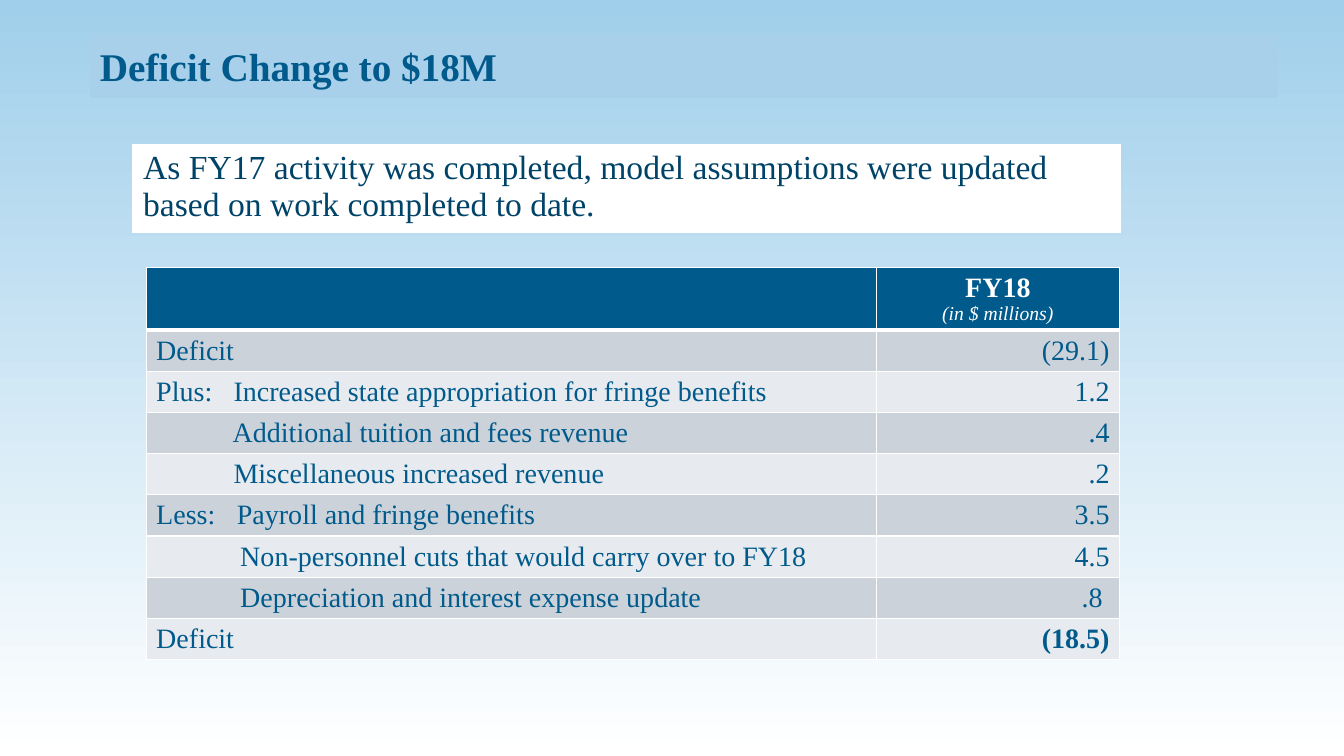
import dataclasses

import pptx
import pptx.dml.color
import pptx.enum.text
import pptx.oxml
import pptx.oxml.ns
import pptx.presentation
import pptx.slide
import pptx.table
import pptx.text.text
import pptx.util

SKY = pptx.dml.color.RGBColor(0xA0, 0xCF, 0xEB)
PALE = pptx.dml.color.RGBColor(0xA9, 0xD0, 0xEA)
BLUE = pptx.dml.color.RGBColor(0x00, 0x5A, 0x8B)
NAVY = pptx.dml.color.RGBColor(0x00, 0x43, 0x68)
WHITE = pptx.dml.color.RGBColor(0xFF, 0xFF, 0xFF)
BANDS = (
    pptx.dml.color.RGBColor(0xCC, 0xD2, 0xDA),
    pptx.dml.color.RGBColor(0xE7, 0xEA, 0xEE),
)
FONT = "Times New Roman"
ALIGN = pptx.enum.text.PP_ALIGN
WIDTH = pptx.util.Inches(13.33)
HEIGHT = pptx.util.Inches(7.5)
COLS, ROWS = 160, 90
THIN, THICK = 1, 3


@dataclasses.dataclass(frozen=True)
class Box:
    """A place on the slide, in grid columns and rows."""

    left: float
    top: float
    width: float
    height: float

    def place(self) -> tuple[int, int, int, int]:
        return across(self.left), down(self.top), across(self.width), down(self.height)


@dataclasses.dataclass(frozen=True)
class Entry:
    """A table line; stop is where its text starts after the label."""

    text: str
    value: str
    label: str = ""
    stop: float = 0
    bold: bool = False
    inset: float = 0


TITLE = Box(10.7, 3.96, 141.4, 7.7)
NOTE = Box(15.84, 17.16, 117.5, 10.3)
BUDGET = Box(17.4, 31.8, 115.9, 45.6)
SPLIT = (86.9, 29)
HEAD, LINE = 7.2, 4.8
ENTRIES = (
    Entry("Deficit", "(29.1)"),
    Entry("Increased state appropriation for fringe benefits", "1.2", "Plus:", 9.2),
    Entry("Additional tuition and fees revenue", ".4", stop=9.1),
    Entry("Miscellaneous increased revenue", ".2", stop=9.2),
    Entry("Payroll and fringe benefits", "3.5", "Less:", 9.6),
    Entry("Non-personnel cuts that would carry over to FY18", "4.5", stop=10),
    Entry("Depreciation and interest expense update", ".8", stop=10, inset=0.83),
    Entry("Deficit", "(18.5)", bold=True),
)


def across(cols: float) -> int:
    return round(WIDTH * cols / COLS)


def down(rows: float) -> int:
    return round(HEIGHT * rows / ROWS)


def write(
    para: pptx.text.text._Paragraph,
    text: str,
    *,
    size: float = 20,
    color: pptx.dml.color.RGBColor = BLUE,
    bold: bool = False,
    slant: bool = False,
    align: ALIGN = ALIGN.LEFT,
) -> None:
    para.alignment = align
    run = para.add_run()
    run.text = text
    run.font.name = FONT
    run.font.size = pptx.util.Pt(size)
    run.font.color.rgb = color
    run.font.bold = bold
    run.font.italic = slant


def indent(para: pptx.text.text._Paragraph, entry: Entry) -> None:
    """Start the text at the stop, by a tab after a label or by a margin."""
    props = para._p.get_or_add_pPr()
    stop = across(entry.stop)
    if entry.label:
        tabs = pptx.oxml.parse_xml(
            f'<a:tabLst {pptx.oxml.ns.nsdecls("a")}><a:tab pos="{stop}" algn="l"/></a:tabLst>'
        )
        props.append(tabs)
    else:
        props.set("marL", str(stop))


def paint(
    cell: pptx.table._Cell,
    fill: pptx.dml.color.RGBColor,
    top: float = THIN,
    base: float = THIN,
) -> None:
    """Fill the cell and give it white edges."""
    cell.fill.solid()
    cell.fill.fore_color.rgb = fill
    props = cell._tc.get_or_add_tcPr()
    edges = (("L", THIN), ("R", THIN), ("T", top), ("B", base))
    for spot, (side, width) in enumerate(edges):
        edge = pptx.oxml.parse_xml(
            f'<a:ln{side} {pptx.oxml.ns.nsdecls("a")} w="{pptx.util.Pt(width)}">'
            f'<a:solidFill><a:srgbClr val="{WHITE}"/></a:solidFill></a:ln{side}>'
        )
        props.insert(spot, edge)


def add_grid(slide: pptx.slide.Slide, rows: int, cols: int, box: Box) -> pptx.table.Table:
    table = slide.shapes.add_table(rows, cols, *box.place()).table
    table.first_row = table.horz_banding = False
    return table


def add_sky(slide: pptx.slide.Slide) -> None:
    fill = slide.background.fill
    fill.gradient()
    fill.gradient_angle = 270
    for stop, place, color in zip(fill.gradient_stops, (0, 1), (SKY, WHITE)):
        stop.position = place
        stop.color.rgb = color


def add_title(slide: pptx.slide.Slide) -> None:
    title = slide.shapes.title
    title.left, title.top, title.width, title.height = TITLE.place()
    title.fill.solid()
    title.fill.fore_color.rgb = PALE
    frame = title.text_frame
    frame.word_wrap = True
    frame.auto_size = pptx.enum.text.MSO_AUTO_SIZE.NONE
    frame.vertical_anchor = pptx.enum.text.MSO_ANCHOR.MIDDLE
    write(frame.paragraphs[0], "Deficit Change to $18M", size=28, bold=True)


def add_note(slide: pptx.slide.Slide) -> None:
    cell = add_grid(slide, 1, 1, NOTE).cell(0, 0)
    paint(cell, WHITE, base=THICK)
    text = (
        "As FY17 activity was completed, model assumptions were updated "
        "based on work completed to date."
    )
    write(cell.text_frame.paragraphs[0], text, size=24, color=NAVY)


def add_budget(slide: pptx.slide.Slide) -> None:
    table = add_grid(slide, len(ENTRIES) + 1, len(SPLIT), BUDGET)
    for col, width in zip(table.columns, SPLIT):
        col.width = across(width)
    for row in table.rows:
        row.height = down(LINE)
    table.rows[0].height = down(HEAD)

    for cell in table.rows[0].cells:
        paint(cell, BLUE, base=THICK)
    frame = table.cell(0, 1).text_frame
    write(frame.paragraphs[0], "FY18", color=WHITE, bold=True, align=ALIGN.CENTER)
    write(
        frame.add_paragraph(), "(in $ millions)",
        size=14, color=WHITE, slant=True, align=ALIGN.CENTER,
    )

    for num, entry in enumerate(ENTRIES):
        name, value = table.rows[num + 1].cells
        for cell in (name, value):
            paint(cell, BANDS[num % 2], top=THIN if num else THICK)
        para = name.text_frame.paragraphs[0]
        indent(para, entry)
        write(para, f"{entry.label}\t{entry.text}" if entry.label else entry.text)
        value.margin_right += across(entry.inset)
        write(
            value.text_frame.paragraphs[0], entry.value,
            bold=entry.bold, align=ALIGN.RIGHT,
        )


def main() -> None:
    deck = pptx.Presentation()
    deck.slide_width, deck.slide_height = WIDTH, HEIGHT
    slide = deck.slides.add_slide(deck.slide_layouts[5])
    add_sky(slide)
    add_budget(slide)
    add_note(slide)
    add_title(slide)
    deck.save("out.pptx")


if __name__ == "__main__":
    main()
